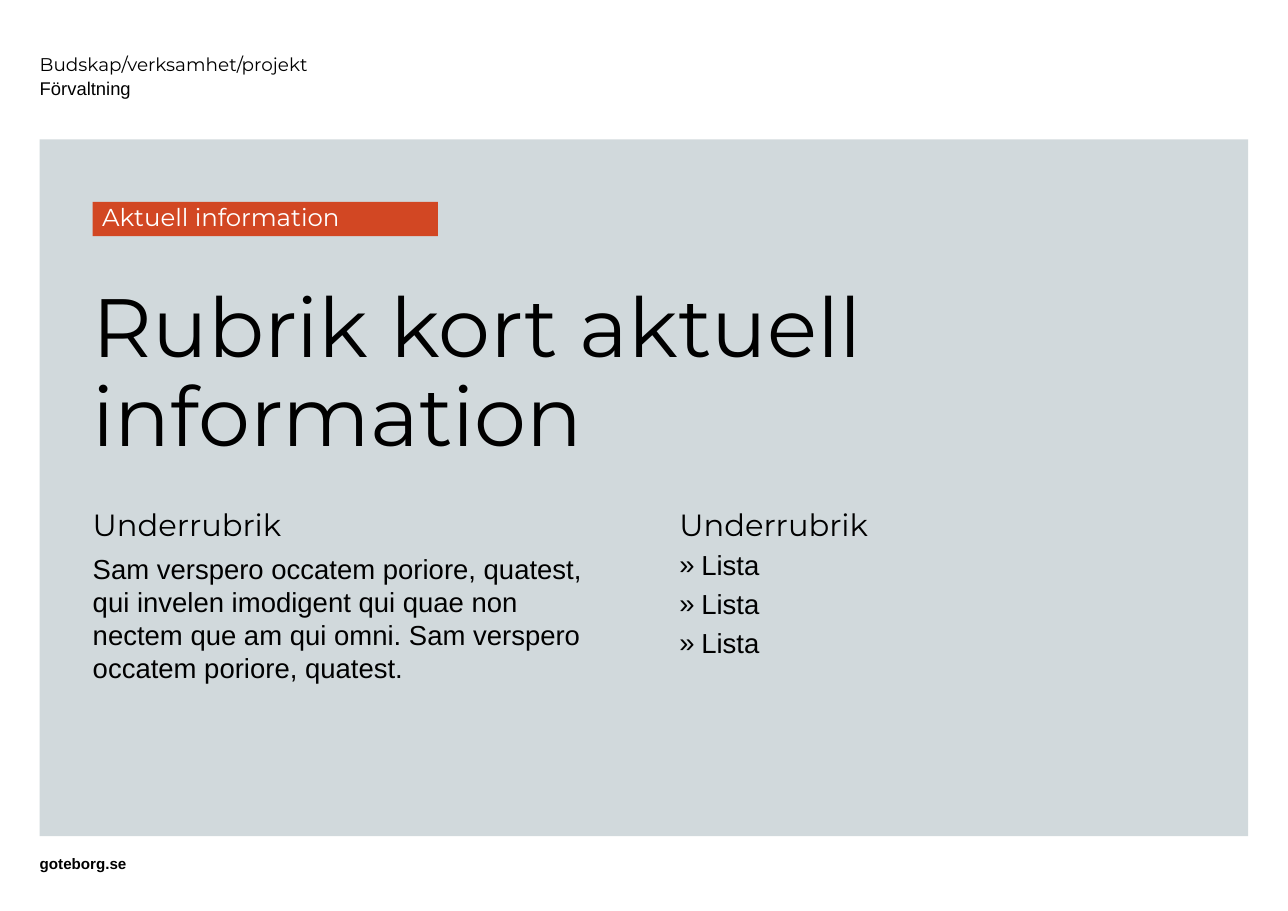
from lxml import etree
from pptx import Presentation
from pptx import util as u
from pptx.dml.color import RGBColor
from pptx.enum import shapes, text
from pptx.oxml.ns import qn

WIDTH, HEIGHT = 16.53, 11.69
MARGIN, INDENT, GAP = 0.51, 0.68, 0.91
COLUMN_WIDTH, COLUMN_TOP, COLUMN_HEIGHT = 6.62, 6.54, 3.65
BULLET_INDENT = 0.28
PANEL, TAG, BLACK, WHITE = "D1D9DC", "D24723", "000000", "FFFFFF"

STYLES = {
    "project": dict(size=17, name="Montserrat", line=u.Pt(22)),
    "department": dict(size=17, name="Arial", line=u.Pt(22)),
    "tag": dict(size=22.6, name="Montserrat", color=WHITE, line=0.9),
    "headline": dict(size=76.4, name="Montserrat", line=0.9),
    "subheading": dict(size=28.3, name="Montserrat", line=0.9),
    "body": dict(size=25.4, name="Arial", before=8.5),
    "item": dict(size=25.4, name="Arial", line=0.9, before=8.5, bullet="»"),
    "website": dict(size=14, name="Arial", bold=True),
}

HEADER = [("project", "Budskap/verksamhet/projekt"), ("department", "Förvaltning")]
TAG_LINE = [("tag", "Aktuell information")]
HEADLINE = [("headline", "Rubrik kort aktuell information")]
COLUMNS = [
    [("subheading", "Underrubrik"),
     ("body", "Sam verspero occatem poriore, quatest, qui invelen imodigent qui quae non "
              "nectem que am qui omni. Sam verspero occatem poriore, quatest.")],
    [("subheading", "Underrubrik")] + [("item", "Lista")] * 3,
]
FOOTER = [("website", "goteborg.se")]


def rgb(color):
    return RGBColor.from_string(color)


def add_panel(slide, box, color):
    panel = slide.shapes.add_shape(shapes.MSO_SHAPE.RECTANGLE, *map(u.Inches, box))
    panel.shadow.inherit = False
    panel.fill.solid()
    panel.fill.fore_color.rgb = rgb(color)
    panel.line.fill.background()
    return panel


def add_bullet(paragraph, mark):
    props = paragraph._p.get_or_add_pPr()
    props.set("marL", str(u.Inches(BULLET_INDENT)))
    props.set("indent", str(-u.Inches(BULLET_INDENT)))
    etree.SubElement(props, qn("a:buFont")).set("typeface", "Arial")
    etree.SubElement(props, qn("a:buChar")).set("char", mark)


def write(shape, lines, anchor=text.MSO_ANCHOR.MIDDLE, inset=0):
    frame = shape.text_frame
    layout = dict(word_wrap=True, vertical_anchor=anchor, margin_left=u.Inches(inset),
                  margin_right=u.Inches(inset), margin_top=0, margin_bottom=0)
    for key, value in layout.items():
        setattr(frame, key, value)
    for number, (role, words) in enumerate(lines):
        style = STYLES[role]
        paragraph = frame.add_paragraph() if number else frame.paragraphs[0]
        if "bullet" in style:
            add_bullet(paragraph, style["bullet"])
        spacing = dict(alignment=text.PP_ALIGN.LEFT, line_spacing=style.get("line", 1.0),
                       space_before=u.Pt(style.get("before", 0)))
        for key, value in spacing.items():
            setattr(paragraph, key, value)
        run = paragraph.add_run()
        run.text = words
        letters = dict(size=u.Pt(style["size"]), name=style["name"], bold=style.get("bold", False))
        for key, value in letters.items():
            setattr(run.font, key, value)
        run.font.color.rgb = rgb(style.get("color", BLACK))


def add_text(slide, box, lines, **layout):
    write(slide.shapes.add_textbox(*map(u.Inches, box)), lines, **layout)


def main():
    deck = Presentation()
    deck.slide_width, deck.slide_height = u.Inches(WIDTH), u.Inches(HEIGHT)
    slide = deck.slides.add_slide(deck.slide_layouts[6])
    left = MARGIN + INDENT

    add_panel(slide, (MARGIN, 1.79, WIDTH - 2 * MARGIN, 8.94), PANEL)
    add_text(slide, (left, 3.44, 11.64, 2.75), HEADLINE)
    write(add_panel(slide, (left, 2.59, 4.43, 0.44), TAG), TAG_LINE, inset=0.12)
    for number, lines in enumerate(COLUMNS):
        column_left = left + number * (COLUMN_WIDTH + GAP)
        add_text(slide, (column_left, COLUMN_TOP, COLUMN_WIDTH, COLUMN_HEIGHT), lines,
                 anchor=text.MSO_ANCHOR.TOP)
    add_text(slide, (MARGIN, 0.73, 7.8, 0.48), HEADER)
    add_text(slide, (MARGIN, 10.96, 7.33, 0.24), FOOTER)
    deck.save("out.pptx")


if __name__ == "__main__":
    main()
